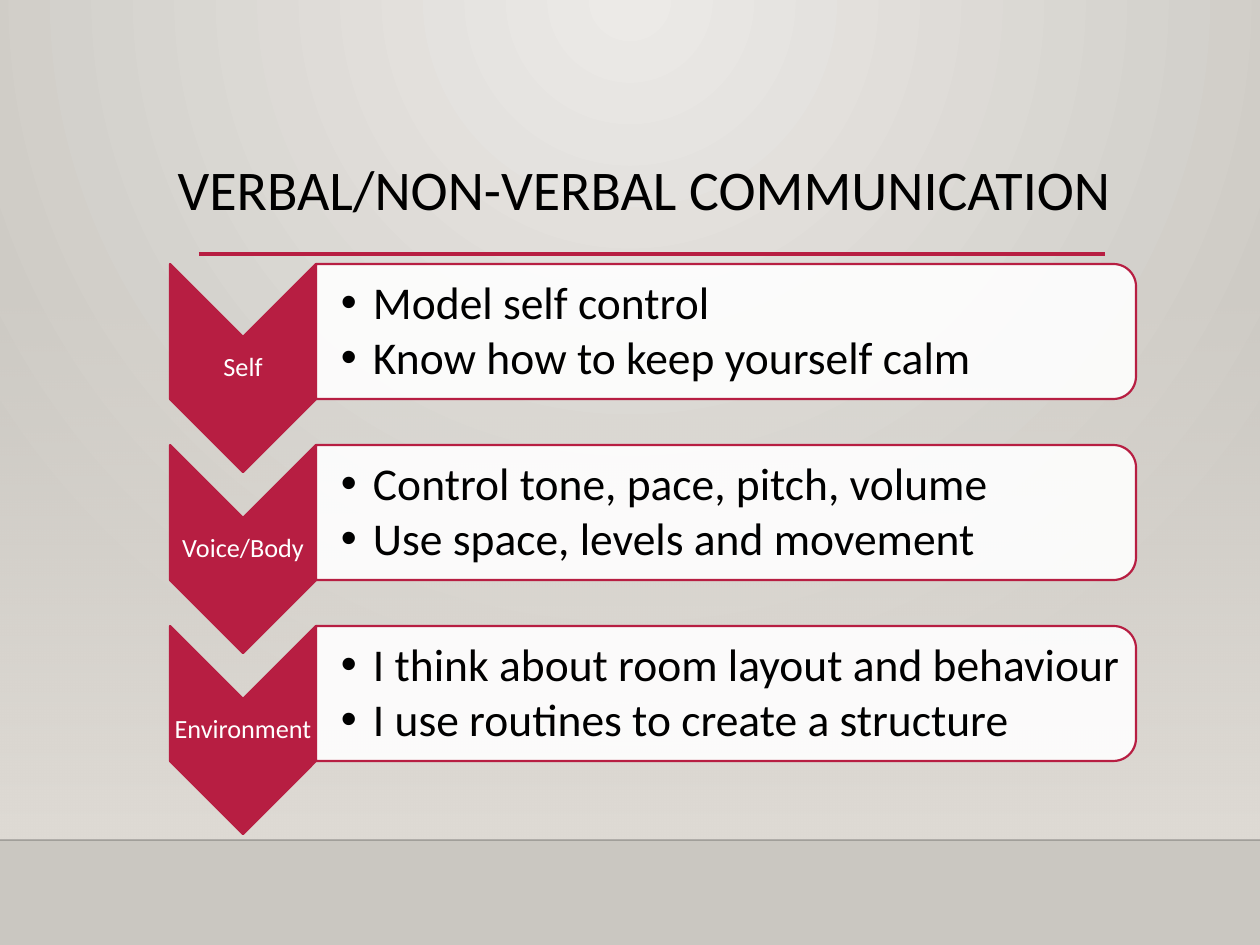
from lxml import etree
from pptx import Presentation
from pptx.dml.color import RGBColor
from pptx.enum.shapes import MSO_CONNECTOR, MSO_SHAPE
from pptx.enum.text import MSO_ANCHOR, MSO_AUTO_SIZE, PP_ALIGN
from pptx.oxml.ns import qn
from pptx.util import Emu, Pt

STRAIGHT = MSO_CONNECTOR.STRAIGHT
RECTANGLE, CHEVRON = MSO_SHAPE.RECTANGLE, MSO_SHAPE.CHEVRON
ROUNDED_END = MSO_SHAPE.ROUND_2_SAME_RECTANGLE
TOP, MIDDLE = MSO_ANCHOR.TOP, MSO_ANCHOR.MIDDLE
LEFT, CENTER = PP_ALIGN.LEFT, PP_ALIGN.CENTER
COMPARISON_LAYOUT = 4

ROWS = [
    ("Self", ["Model self control", "Know how to keep yourself calm"]),
    ("Voice/Body", ["Control tone, pace, pitch, volume",
                    "Use space, levels and movement"]),
    ("Environment", ["I think about room layout and behaviour",
                     "I use routines to create a structure"]),
]
ROW_TOP, ROW_PITCH = 264, 181


def px(length):
    """Turn px, 126 to the inch, into EMU."""
    return Emu(round(length * 914400 / 126))


def color(hex_string):
    return RGBColor.from_string(hex_string)


def set_alpha(color_element, percent):
    etree.SubElement(color_element, qn("a:alpha"), val=str(percent * 1000))


def gradient(stops, direction, **attributes):
    """Build a gradient fill from (position, colour, opacity) in percent."""
    fill = etree.Element(qn("a:gradFill"), rotWithShape="1")
    stop_list = etree.SubElement(fill, qn("a:gsLst"))
    for position, hex_string, opacity in stops:
        stop = etree.SubElement(stop_list, qn("a:gs"), pos=str(position * 1000))
        set_alpha(etree.SubElement(stop, qn("a:srgbClr"), val=hex_string), opacity)
    return fill, etree.SubElement(fill, qn(direction), **attributes)


def swap_solid_fill(parent, new_fill):
    parent.replace(parent.find(qn("a:solidFill")), new_fill)


def write_text(shape, lines, *, size, ink, align=LEFT, anchor=MIDDLE,
               insets=(0, 0, 0, 0), space_after=0, bullet_indent=0):
    """Fill a shape with paragraphs; insets are left, top, right, bottom."""
    frame = shape.text_frame
    frame.word_wrap = True
    frame.auto_size = MSO_AUTO_SIZE.NONE
    frame.vertical_anchor = anchor
    (frame.margin_left, frame.margin_top,
     frame.margin_right, frame.margin_bottom) = map(px, insets)
    for index, line in enumerate(lines):
        paragraph = frame.add_paragraph() if index else frame.paragraphs[0]
        if bullet_indent:
            properties = paragraph._p.get_or_add_pPr()
            properties.set("marL", str(px(bullet_indent)))
            properties.set("indent", str(-px(bullet_indent)))
            etree.SubElement(properties, qn("a:buFont"), typeface="Arial")
            etree.SubElement(properties, qn("a:buChar"), char="•")
        paragraph.alignment = align
        paragraph.line_spacing = 0.9
        paragraph.space_before = Pt(0)
        paragraph.space_after = Pt(space_after)
        run = paragraph.add_run()
        run.text = line
        run.font.name = "Calibri"
        run.font.size = Pt(size)
        run.font.bold = False
        run.font.color.rgb = color(ink)


class SlideBuilder:
    accent, ink, paper = "B71E42", "000000", "FFFFFF"

    def __init__(self, slide):
        self.slide = slide
        self.shapes = slide.shapes
        self.bodies = [placeholder for placeholder in slide.placeholders
                       if placeholder.placeholder_format.idx]

    def background(self):
        self.slide.background.fill.solid()
        fill, circle = gradient([(0, "ECEAE7", 100), (100, "CAC7C1", 100)],
                                "a:path", path="circle")
        etree.SubElement(circle, qn("a:fillToRect"),
                         l="43000", t="0", r="43000", b="100000")
        swap_solid_fill(self.slide.element.find(".//" + qn("p:bgPr")), fill)

    def shape(self, kind, left, top, width, height, fill, opacity=100, line=None):
        shape = self.shapes.add_shape(kind, *map(px, (left, top, width, height)))
        shape.shadow.inherit = False
        shape.fill.solid()
        shape.fill.fore_color.rgb = color(fill)
        if opacity < 100:
            properties = shape.element.spPr
            set_alpha(properties.find(qn("a:solidFill"))[0], opacity)
        if line:
            shape.line.color.rgb = color(line)
            shape.line.width = Pt(1.25)
        else:
            shape.line.fill.background()
        return shape

    def turned_shape(self, kind, left, top, width, height, fill, opacity=100):
        """Add a shape turned by 90 degrees; the box is the one it covers."""
        shift = (width - height) / 2
        shape = self.shape(kind, left + shift, top - shift, height, width,
                           fill, opacity, self.accent)
        shape.rotation = 90

    def fading_panel(self, left, top, width, height):
        panel = self.shape(RECTANGLE, left, top, width, height, "DFDBD5")
        fill, _ = gradient([(0, "DFDBD5", 0), (100, "DFDBD5", 100)],
                           "a:lin", ang="5400000", scaled="0")
        swap_solid_fill(panel.element.spPr, fill)

    def rule(self, left, right, y, hex_string, weight, opacity=100):
        line = self.shapes.add_connector(STRAIGHT, *map(px, (left, y, right, y)))
        line.line.color.rgb = color(hex_string)
        line.line.width = Pt(weight)
        properties = line.element.spPr
        set_alpha(properties.find(".//" + qn("a:srgbClr")), opacity)
        etree.SubElement(properties, qn("a:effectLst"))

    def place(self, placeholder, left, top, width, height):
        """Move a placeholder and bring it to the front."""
        (placeholder.left, placeholder.top,
         placeholder.width, placeholder.height) = map(px, (left, top, width, height))
        self.shapes._spTree.append(placeholder.element)

    def title(self, text):
        self.place(self.shapes.title, 84, 156, 1121, 168)
        write_text(self.shapes.title, [text], size=32, ink=self.ink,
                   align=CENTER, anchor=TOP, insets=(13, 6, 13, 6))

    def label(self, text, left, top, width, height):
        box = self.shapes.add_textbox(*map(px, (left, top, width, height)))
        write_text(box, [text], size=15, ink=self.paper, align=CENTER,
                   insets=(1, 1, 1, 1))

    def bullets(self, lines, left, top, width, height):
        body = self.bodies.pop(0)
        self.place(body, left, top, width, height)
        write_text(body, lines, size=26, ink=self.ink, insets=(25, 3, 3, 3),
                   space_after=3.5, bullet_indent=32)

    def row(self, top, heading, lines):
        self.turned_shape(CHEVRON, 170, top, 146, 208, self.accent)
        self.label(heading, 170, top + 73, 146, 63)
        self.turned_shape(ROUNDED_END, 316, top, 820, 135, self.paper, opacity=90)
        self.bullets(lines, 316, top + 7, 814, 122)

    def remove_unused_bodies(self):
        for body in self.bodies:
            self.shapes._spTree.remove(body.element)


def main():
    presentation = Presentation()
    presentation.slide_width, presentation.slide_height = px(1260), px(945)
    layout = presentation.slide_layouts[COMPARISON_LAYOUT]
    builder = SlideBuilder(presentation.slides.add_slide(layout))
    builder.background()
    builder.fading_panel(0, 277, 1260, 563)
    builder.rule(0, 1260, 840, "000001", 1, opacity=20)
    builder.rule(199, 1105, 254, builder.accent, 2.5)
    builder.title("VERBAL/NON-VERBAL COMMUNICATION")
    for index, (heading, lines) in enumerate(ROWS):
        builder.row(ROW_TOP + index * ROW_PITCH, heading, lines)
    builder.remove_unused_bodies()
    presentation.save("out.pptx")


if __name__ == "__main__":
    main()
